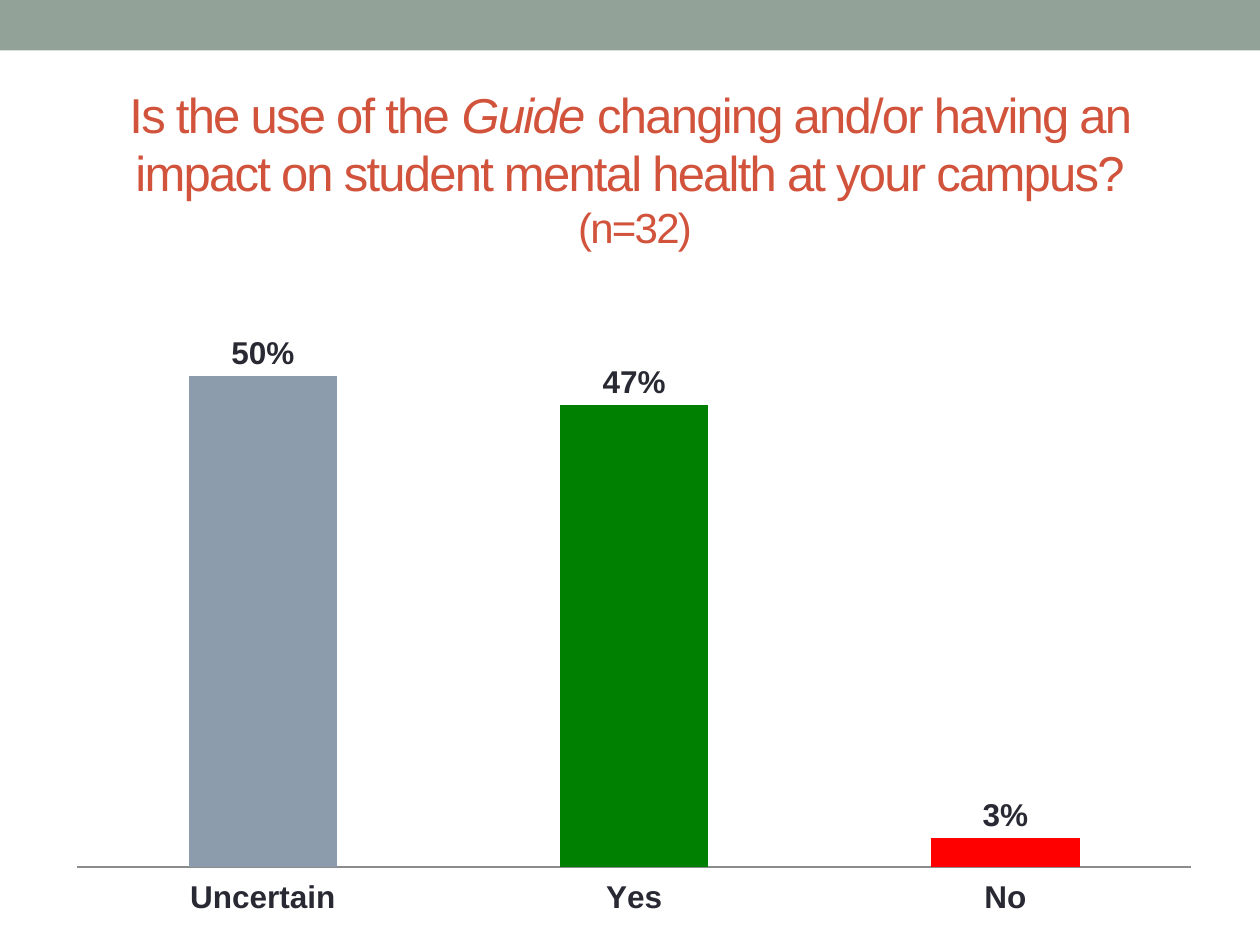
from lxml.etree import SubElement
from pptx import Presentation
from pptx.chart.data import CategoryChartData
from pptx.dml.color import RGBColor
from pptx.enum.chart import XL_CHART_TYPE as ChartType, XL_LABEL_POSITION as LabelPosition
from pptx.enum.chart import XL_TICK_LABEL_POSITION as TickLabels, XL_TICK_MARK as TickMark
from pptx.enum.shapes import MSO_SHAPE as Preset
from pptx.enum.text import MSO_ANCHOR as Anchor, MSO_AUTO_SIZE as AutoSize, PP_ALIGN as Align
from pptx.oxml.ns import qn
from pptx.util import Cm, Pt

FONT = "Arial"
INK = "292934"
ANSWERS = [("Uncertain", 0.5, "8C9CAD"), ("Yes", 0.47, "008000"), ("No", 0.03, "FF0000")]


def paint(colour_format, colour):
    """Give a colour format the colour of a hex string."""
    colour_format.rgb = RGBColor.from_string(colour)


def fill_solid(fill, colour):
    """Make a fill solid in one colour."""
    fill.solid()
    paint(fill.fore_color, colour)


def style_font(font, size, colour, bold=False, italic=False):
    """Set typeface, size, colour and emphasis."""
    font.name, font.size, font.bold, font.italic = FONT, Pt(size), bold, italic
    paint(font.color, colour)


def add_banner(slide, width):
    """Draw the band along the top edge."""
    banner = slide.shapes.add_shape(Preset.RECTANGLE, 0, 0, width, Cm(1.02))
    banner.shadow.inherit = False
    fill_solid(banner.fill, "93A299")
    banner.line.fill.background()


def add_title_run(paragraph, text, size, italic=False):
    """Append a tightly spaced run to the title."""
    run = paragraph.add_run()
    run.text = text
    style_font(run.font, size, "D2533C", italic=italic)
    run.font._element.set("spc", "-100")


def write_title(slide):
    """Place the question in the title placeholder."""
    title = slide.shapes.title
    title.left, title.top, title.width, title.height = Cm(1.27), Cm(1.47), Cm(22.86), Cm(3.84)
    frame = title.text_frame
    frame.word_wrap = True
    frame.auto_size = AutoSize.NONE
    frame.vertical_anchor = Anchor.MIDDLE
    question = frame.paragraphs[0]
    question.alignment = Align.CENTER
    add_title_run(question, "Is the use of the ", 28)
    add_title_run(question, "Guide", 28, italic=True)
    add_title_run(question, " changing and/or having an impact on student mental health at your campus?", 28)
    question.add_line_break()
    add_title_run(question, " (n=32)", 24)


def place_plot(chart, **fractions):
    """Fix the inner plot area as fractions of the chart."""
    plot_area = chart._chartSpace.chart.plotArea
    for old_layout in plot_area.findall(qn("c:layout")):
        plot_area.remove(old_layout)
    layout = SubElement(plot_area, qn("c:layout"))
    plot_area.insert(0, layout)
    manual = SubElement(layout, qn("c:manualLayout"))
    settings = {"layoutTarget": "inner", "xMode": "edge", "yMode": "edge", **fractions}
    for tag, value in settings.items():
        SubElement(manual, qn(f"c:{tag}")).set("val", str(value))


def style_axes(chart):
    """Show only the answer names and their base line."""
    answer_axis, share_axis = chart.category_axis, chart.value_axis
    answer_axis.major_tick_mark = answer_axis.minor_tick_mark = TickMark.NONE
    answer_axis.tick_label_position = TickLabels.LOW
    style_font(answer_axis.tick_labels.font, 18, INK, bold=True)
    answer_axis.format.line.width = Pt(0.75)
    paint(answer_axis.format.line.color, "8C8C8C")
    share_axis.minimum_scale, share_axis.maximum_scale = 0, 0.6
    share_axis.has_major_gridlines = False
    share_axis.tick_labels.number_format = "0%"
    share_axis.tick_labels.number_format_is_linked = False
    share_axis.visible = False


def style_columns(plot):
    """Colour each column and label it with its share."""
    plot.gap_width, plot.overlap, plot.vary_by_categories = 150, -25, False
    shares = plot.series[0]
    fill_solid(shares.format.fill, "93A299")
    for index, (_, _, colour) in enumerate(ANSWERS):
        fill_solid(shares.points[index].format.fill, colour)
    labels = shares.data_labels
    labels.show_value = True
    labels.number_format, labels.number_format_is_linked = "0%", False
    labels.position = LabelPosition.OUTSIDE_END
    style_font(labels.font, 18, INK, bold=True)


def add_answer_chart(slide):
    """Add the column chart of answers."""
    answers = CategoryChartData(number_format="0%")
    answers.categories = [name for name, _, _ in ANSWERS]
    answers.add_series("Series 1", [share for _, share, _ in ANSWERS])
    chart = slide.shapes.add_chart(
        ChartType.COLUMN_CLUSTERED, Cm(1.09), Cm(5.33), Cm(23.39), Cm(13.21), answers
    ).chart
    chart.has_legend = chart.has_title = False
    style_font(chart.font, 10, INK)
    style_axes(chart)
    style_columns(chart.plots[0])
    place_plot(chart, x=0.02, y=0.02, w=0.96, h=0.9)


def main():
    """Build and save the slide."""
    deck = Presentation()
    deck.slide_width, deck.slide_height = Cm(25.4), Cm(19.05)
    slide = deck.slides.add_slide(deck.slide_layouts[5])
    fill_solid(slide.background.fill, "FFFFFF")
    add_banner(slide, deck.slide_width)
    write_title(slide)
    add_answer_chart(slide)
    deck.save("out.pptx")


if __name__ == "__main__":
    main()
